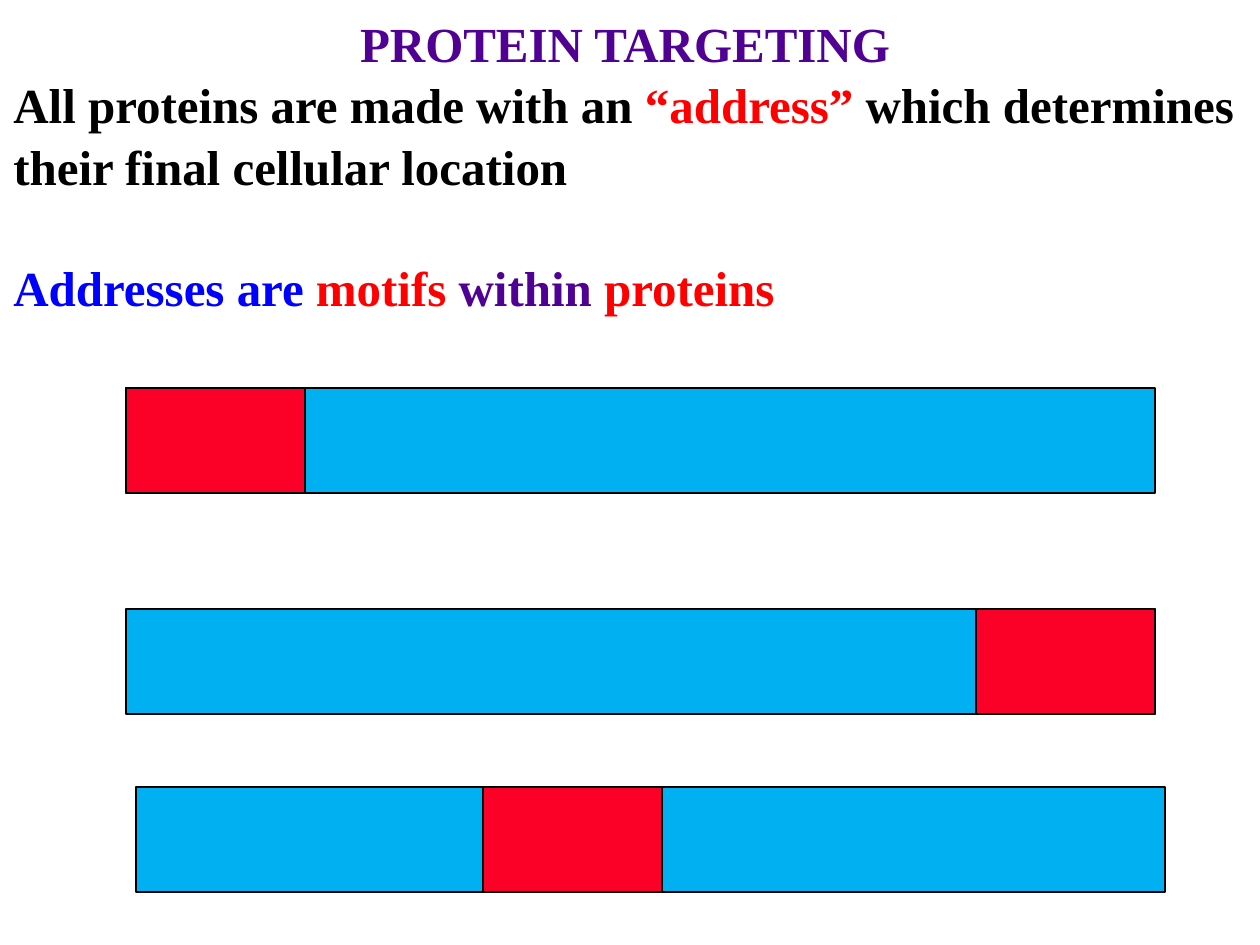
from pptx import Presentation
from pptx.dml.color import RGBColor as Rgb
from pptx.enum.shapes import MSO_SHAPE as Kind
from pptx.enum.text import PP_ALIGN as Align
from pptx.util import Pt

PX = 914400 // 126
HUES = {
    "black": "000000", "red": "FF0000", "blue": "0000FF",
    "purple": "500093", "chain": "00B0F0", "motif": "FC0128",
}
FONT = "Times New Roman"
SIZE = 28
LINES = [
    (Align.CENTER, 0, [("PROTEIN TARGETING", "purple")]),
    (Align.LEFT, 0, [
        ("All proteins are made with an ", "black"),
        ("“address” ", "red"),
        ("which determines their final cellular location", "black"),
    ]),
    (Align.LEFT, 33.7, [
        ("Addresses are ", "blue"), ("motifs ", "red"),
        ("within ", "purple"), ("proteins", "red"),
    ]),
]
CHAIN, MOTIF, TALL = 1029, 179, 105
BARS = [(126, 388, 0), (126, 609, CHAIN - MOTIF), (136, 787, 347)]


def hue(name):
    return Rgb.from_string(HUES[name])


def add_bar(slide, x, y, wide, name):
    bar = slide.shapes.add_shape(
        Kind.RECTANGLE, x * PX, y * PX, wide * PX, TALL * PX)
    bar.shadow.inherit = False
    bar.fill.solid()
    bar.fill.fore_color.rgb = hue(name)
    bar.line.color.rgb = hue("black")
    bar.line.width = Pt(1)


def add_text(slide):
    frame = slide.shapes.add_textbox(1 * PX, 4 * PX, 1248 * PX, 267 * PX).text_frame
    frame.word_wrap = True
    for i, (align, gap, runs) in enumerate(LINES):
        para = frame.add_paragraph() if i else frame.paragraphs[0]
        para.alignment = align
        para.line_spacing = 1.05
        para.space_before = Pt(gap)
        for text, name in runs:
            run = para.add_run()
            run.text = text
            run.font.name = FONT
            run.font.size = Pt(SIZE)
            run.font.bold = True
            run.font.color.rgb = hue(name)


def main():
    deck = Presentation()
    deck.slide_width, deck.slide_height = 1260 * PX, 945 * PX
    slide = deck.slides.add_slide(deck.slide_layouts[6])
    add_text(slide)
    for x, y, shift in BARS:
        add_bar(slide, x, y, CHAIN, "chain")
        add_bar(slide, x + shift, y, MOTIF, "motif")
    deck.save("out.pptx")


if __name__ == "__main__":
    main()
